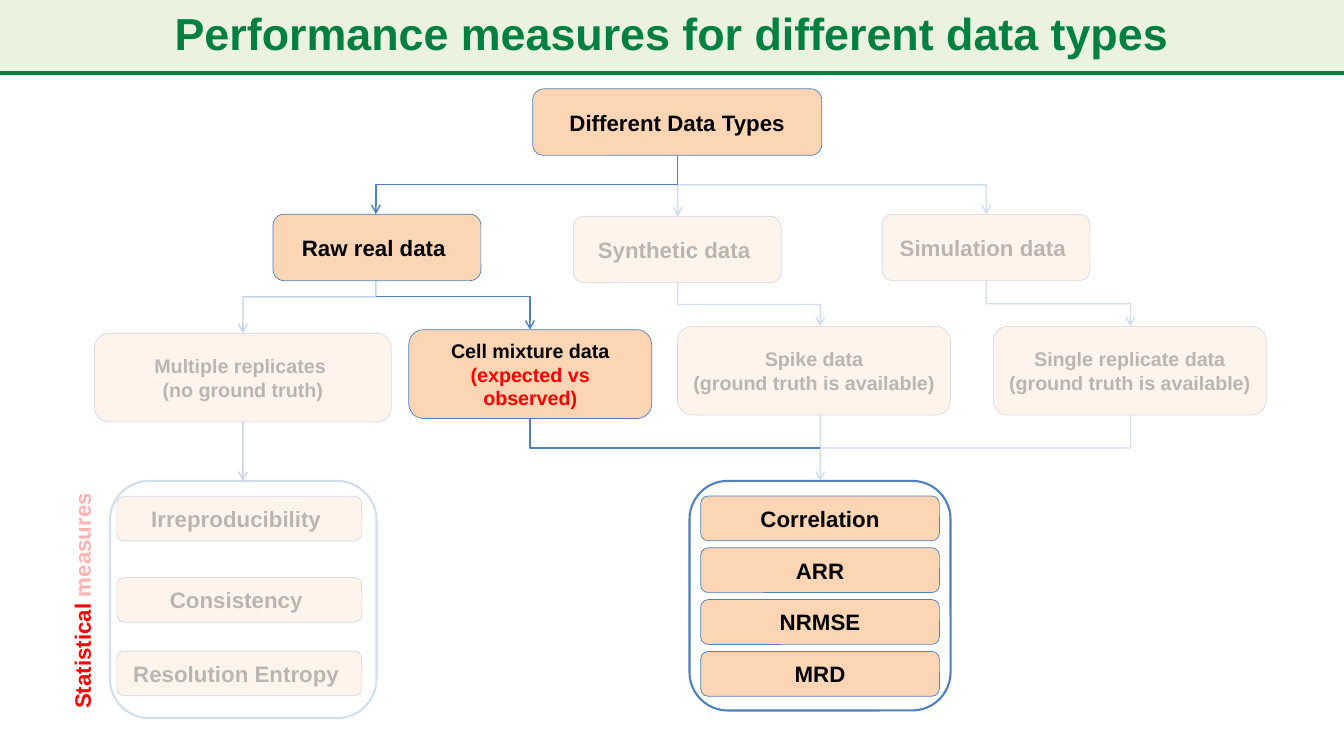
from pptx import Presentation
from pptx.dml.color import RGBColor
from pptx.enum.shapes import MSO_CONNECTOR, MSO_SHAPE
from pptx.enum.text import MSO_ANCHOR, PP_ALIGN
from pptx.oxml.ns import qn
from pptx.util import Pt
from lxml import etree

ROUND = MSO_SHAPE.ROUNDED_RECTANGLE
STRAIGHT, ELBOW = MSO_CONNECTOR.STRAIGHT, MSO_CONNECTOR.ELBOW
MIDDLE, CENTER = MSO_ANCHOR.MIDDLE, PP_ALIGN.CENTER
PEACH, BLUE, GREEN, PALE = "FCD5B5", "4F81BD", "008040", "EBF3E0"
BLACK, RED = "000000", "FF0000"
BIG, SMALL = 15.9, 14.1
FULL, FAINT = 100, 25


def put(target, values):
    for name, value in values.items():
        setattr(target, name, value)


def paint(fill, owner, color, alpha=FULL):
    """Fill with a hex colour; owner is the XML element that holds the fill."""
    fill.solid()
    fill.fore_color.rgb = RGBColor.from_string(color)
    if alpha < FULL:
        tone = owner.find(qn("a:solidFill")).find(qn("a:srgbClr"))
        etree.SubElement(tone, qn("a:alpha")).set("val", str(alpha * 1000))


def stroke(item, color, width, alpha=FULL):
    item.line.width = Pt(width)
    paint(item.line.fill, item.element.spPr.find(qn("a:ln")), color, alpha)


def write(para, text, size, color, alpha=FULL):
    run = para.add_run()
    run.text = text
    put(run.font, {"name": "Arial", "size": Pt(size), "bold": True})
    paint(run.font.fill, run._r.get_or_add_rPr(), color, alpha)


def panel(slide, area, width, alpha=FULL):
    shape = slide.shapes.add_shape(ROUND, *map(Pt, area))
    shape.shadow.inherit = False
    shape.fill.background()
    stroke(shape, BLUE, width, alpha)
    return shape


def box(slide, area, lines, size=BIG, alpha=FULL, colors=(BLACK, BLACK)):
    shape = panel(slide, area, 0.5, alpha)
    paint(shape.fill, shape.element.spPr, PEACH, alpha)
    frame = shape.text_frame
    put(frame, {"word_wrap": True, "vertical_anchor": MIDDLE})
    for i, (text, color) in enumerate(zip(lines, colors)):
        para = frame.add_paragraph() if i else frame.paragraphs[0]
        para.alignment = CENTER
        write(para, text, size, color, alpha)


def finish(line, color, width, alpha, arrow):
    stroke(line, color, width, alpha)
    props = line.element.spPr
    if arrow:
        etree.SubElement(props.find(qn("a:ln")), qn("a:tailEnd")).set("type", "arrow")
    etree.SubElement(props, qn("a:effectLst"))


def rule(slide, start, end, color=BLUE, width=1, alpha=FULL, arrow=True):
    line = slide.shapes.add_connector(STRAIGHT, *map(Pt, start + end))
    finish(line, color, width, alpha, arrow)


def bend(slide, start, end, alpha=FULL, arrow=True, turns=2, across=False, at=0.5):
    """Elbow that leaves downwards, or sideways to the right if across is set."""
    (x1, y1), (x2, y2) = start, end
    wide, high = abs(x2 - x1), y2 - y1
    left, top = min(x1, x2), y1
    if not across:
        left, top = left + (wide - high) / 2, top + (high - wide) / 2
        wide, high = high, wide
    line = slide.shapes.add_connector(
        ELBOW, Pt(left), Pt(top), Pt(left + wide), Pt(top + high))
    frame = line.element.spPr.find(qn("a:xfrm"))
    if not across:
        right = x2 > x1
        frame.set("rot", str((270 if right else 90) * 60000))
        if right:
            frame.set("flipH", "1")
    shape = line.element.spPr.find(qn("a:prstGeom"))
    shape.set("prst", f"bentConnector{turns + 1}")
    if turns == 2:
        guide = etree.SubElement(shape.find(qn("a:avLst")), qn("a:gd"))
        guide.set("name", "adj1")
        guide.set("fmla", f"val {round(at * 100000)}")
    finish(line, BLUE, 1, alpha, arrow)


def head(slide):
    title = slide.shapes.title
    put(title, {"left": 0, "top": 0, "width": Pt(960), "height": Pt(51)})
    paint(title.fill, title.element.spPr, PALE)
    put(title.text_frame, {"word_wrap": True, "vertical_anchor": MIDDLE})
    para = title.text_frame.paragraphs[0]
    put(para, {"alignment": CENTER, "line_spacing": 0.9})
    write(para, "Performance measures for different data types", 32, GREEN)
    rule(slide, (0, 52), (960, 52), GREEN, 3, arrow=False)


def label(slide):
    note = slide.shapes.add_textbox(Pt(45.5), Pt(338.5), Pt(33.5), Pt(175))
    frame = note.text_frame
    frame.word_wrap = True
    note.element.txBody.find(qn("a:bodyPr")).set("vert", "vert270")
    write(frame.paragraphs[0], "Statistical ", BIG, RED)
    write(frame.paragraphs[0], "measures", BIG, RED, 29)


def types(slide):
    box(slide, (380.5, 63.5, 206.5, 47.5), ["Different Data Types"])
    for x, y, text, alpha in (
            (195, 153, "Raw real data ", FULL),
            (409.5, 154.5, "Synthetic data ", FAINT),
            (630, 153, "Simulation data ", FAINT)):
        box(slide, (x, y, 148.5, 47.5), [text], alpha=alpha)
    known = "(ground truth is available)"
    for x, y, wide, lines in (
            (67.5, 238, 212, ["Multiple replicates ", "(no ground truth)"]),
            (484, 233, 195, ["Spike data", known]),
            (709.5, 233, 195, ["Single replicate data", known])):
        box(slide, (x, y, wide, 63.5), lines, SMALL, FAINT)
    box(slide, (292, 235.5, 173.5, 63.5),
        ["Cell mixture data", "(expected vs observed)"], SMALL, colors=(BLACK, RED))


def measures(slide):
    panel(slide, (78.5, 343.5, 190.5, 169.5), 1.5, FAINT)
    for y, text in ((354.5, "Irreproducibility "), (412.5, "Consistency "),
                    (465, "Resolution Entropy ")):
        box(slide, (83.5, y, 175, 32), [text], alpha=FAINT)
    panel(slide, (492.5, 343.5, 186.5, 164), 1.5)
    for i, text in enumerate(("Correlation", "ARR", "NRMSE", "MRD")):
        box(slide, (500.5, 354.3 + 37 * i, 170.5, 32), [text])


def links(slide):
    root, raw, sim = 484, 268.5, 704.5
    multi, cell, spike, single = 173.5, 378.5, 586, 807.5
    bend(slide, (root, 111), (raw, 153))
    bend(slide, (root, 132), (sim, 153), FAINT, turns=1, across=True)
    rule(slide, (root, 132), (root, 154.5), alpha=FAINT)
    bend(slide, (raw, 201), (multi, 238), 32, at=0.3)
    bend(slide, (raw, 212), (cell, 235.5), turns=1, across=True)
    bend(slide, (root, 202), (spike, 233), FAINT)
    bend(slide, (sim, 201), (single, 233), FAINT)
    rule(slide, (multi, 301.5), (multi, 343.5), alpha=32)
    bend(slide, (single, 296.5), (spike, 343.5), FAINT)
    bend(slide, (cell, 299.5), (spike, 320), arrow=False, turns=1)
    rule(slide, (spike, 296.5), (spike, 320), alpha=FAINT, arrow=False)


def main():
    deck = Presentation()
    put(deck, {"slide_width": Pt(960), "slide_height": Pt(540)})
    slide = deck.slides.add_slide(deck.slide_layouts[5])
    head(slide)
    types(slide)
    measures(slide)
    label(slide)
    links(slide)
    deck.save("out.pptx")


if __name__ == "__main__":
    main()
